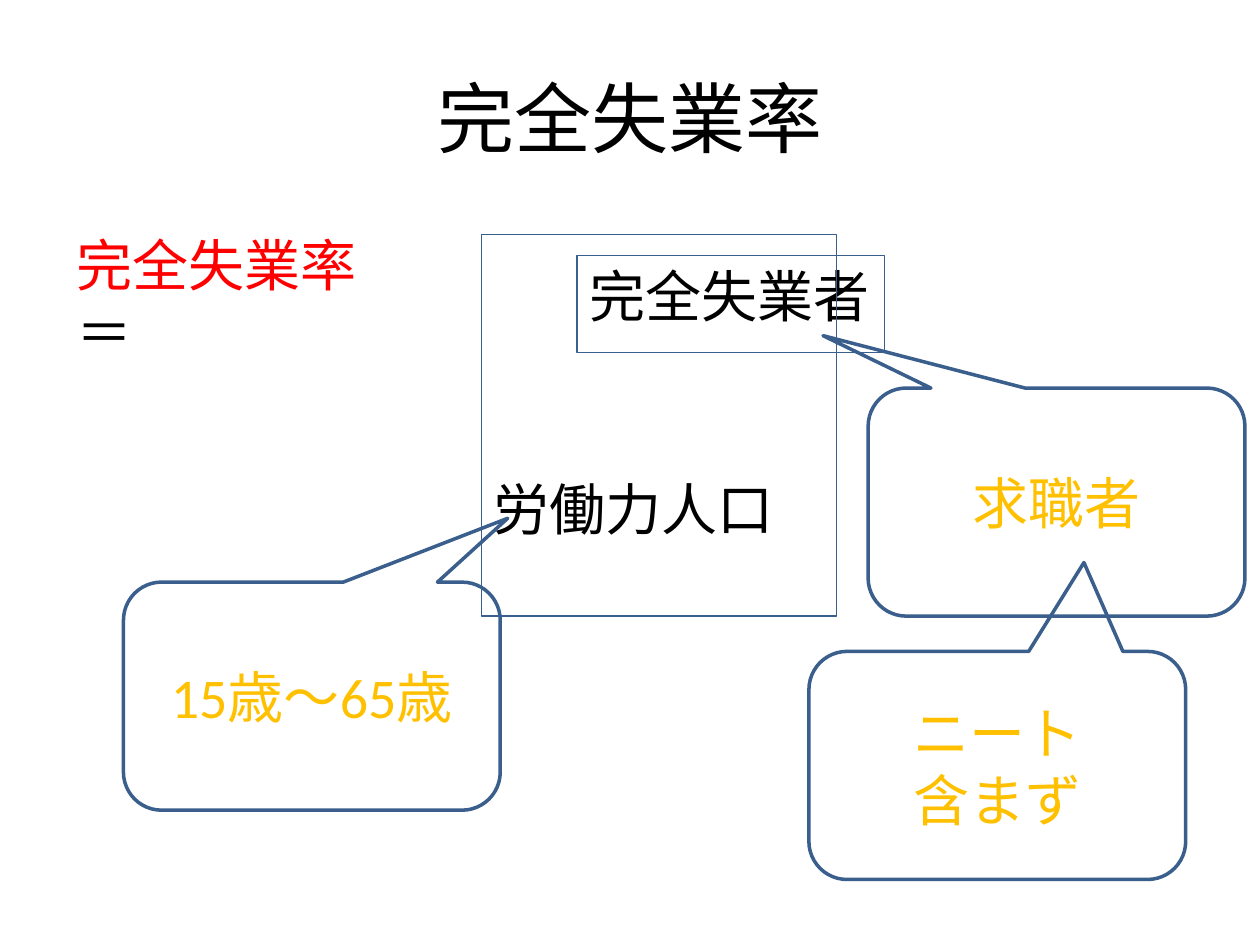
from dataclasses import dataclass

from lxml.etree import SubElement
from pptx import Presentation
from pptx.dml.color import RGBColor
from pptx.enum.shapes import MSO_SHAPE
from pptx.enum.text import MSO_ANCHOR, MSO_AUTO_SIZE, PP_ALIGN
from pptx.oxml.ns import qn
from pptx.util import Inches, Pt


@dataclass(frozen=True)
class Theme:
    font: str = "Calibri"
    title_size: int = 44
    text_size: int = 32
    text: str = "000000"
    term: str = "FF0000"
    note: str = "FFC000"
    outline: str = "3A5F8C"
    paper: str = "FFFFFF"
    thin: float = 0.75
    thick: float = 2


THEME = Theme()
WIDTH, HEIGHT = 10, 7.5
CALLOUT_SIZE = (2.99, 1.81)
CORNER = 0.167


def color(value):
    return RGBColor.from_string(value)


def place(shape, box):
    shape.left, shape.top, shape.width, shape.height = map(Inches, box)


def write(frame, lines, size=THEME.text_size, align=PP_ALIGN.LEFT,
          anchor=MSO_ANCHOR.TOP, before=0):
    """Fill a frame; each line is a list of (text, colour) spans."""
    frame.word_wrap = True
    frame.auto_size = MSO_AUTO_SIZE.NONE
    frame.vertical_anchor = anchor
    for number, spans in enumerate(lines):
        para = frame.paragraphs[0] if number == 0 else frame.add_paragraph()
        para.alignment = align
        para.space_before = Pt(before)
        for text, tint in spans:
            span = para.add_run()
            span.text = text
            span.font.name = THEME.font
            span.font.size = Pt(size)
            span.font.color.rgb = color(tint)


def add_outline(slide, kind, box, weight, fill=None):
    shape = slide.shapes.add_shape(kind, *map(Inches, box))
    shape.shadow.inherit = False
    if fill:
        shape.fill.solid()
        shape.fill.fore_color.rgb = color(fill)
    else:
        shape.fill.background()
    shape.line.color.rgb = color(THEME.outline)
    shape.line.width = Pt(weight)
    return shape


def add_heading(slide, box):
    title = slide.shapes.title
    place(title, box)
    write(title.text_frame, [[("完全失業率", THEME.text)]],
          size=THEME.title_size, align=PP_ALIGN.CENTER, anchor=MSO_ANCHOR.MIDDLE)


def add_formula_start(slide, box):
    body = slide.placeholders[1]
    place(body, box)
    write(body.text_frame, [[("完全失業率", THEME.term), ("　＝", THEME.text)]],
          before=THEME.text_size * 0.2)
    # Plain paragraph: no bullet and no hanging indent
    for para in body.text_frame.paragraphs:
        properties = para._p.get_or_add_pPr()
        properties.set("marL", "0")
        properties.set("indent", "0")
        SubElement(properties, qn("a:buNone"))


def add_term(slide, box, text, fill=None, inset=0.05):
    shape = add_outline(slide, MSO_SHAPE.RECTANGLE, box, THEME.thin, fill)
    shape.text_frame.margin_top = Inches(inset)
    write(shape.text_frame, [[(text, THEME.text)]], before=THEME.text_size * 0.2)


def add_callout(slide, corner, tip, lines):
    """Draw a note; tip is the pointer's offset from the centre in box shares."""
    shape = add_outline(slide, MSO_SHAPE.ROUNDED_RECTANGULAR_CALLOUT,
                        corner + CALLOUT_SIZE, THEME.thick)
    for number, value in enumerate(tip + (CORNER,)):
        shape.adjustments[number] = value
    write(shape.text_frame, [[(line, THEME.note)] for line in lines],
          align=PP_ALIGN.CENTER, anchor=MSO_ANCHOR.MIDDLE)


def main():
    deck = Presentation()
    deck.slide_width, deck.slide_height = Inches(WIDTH), Inches(HEIGHT)
    slide = deck.slides.add_slide(deck.slide_layouts[1])

    # Title and left side of the formula
    add_heading(slide, (WIDTH * 0.05, HEIGHT * 0.04, WIDTH * 0.9, 1.25))
    add_formula_start(slide, (0.51, 1.78, 3.23, 0.66))

    # Numerator and denominator
    add_term(slide, (4.58, 2.03, 2.44, 0.77), "完全失業者", fill=THEME.paper)
    add_term(slide, (3.82, 1.86, 2.82, 3.03), "労働力人口", inset=1.91)

    # Notes: corner, pointer tip, lines
    notes = [
        ((0.98, 4.62), (0.52, -0.78), ["15歳～65歳"]),
        ((6.89, 3.08), (-0.62, -0.73), ["求職者"]),
        ((6.42, 5.17), (0.23, -0.89), ["ニート", "含まず"]),
    ]
    for corner, tip, lines in notes:
        add_callout(slide, corner, tip, lines)

    deck.save("out.pptx")


if __name__ == "__main__":
    main()
